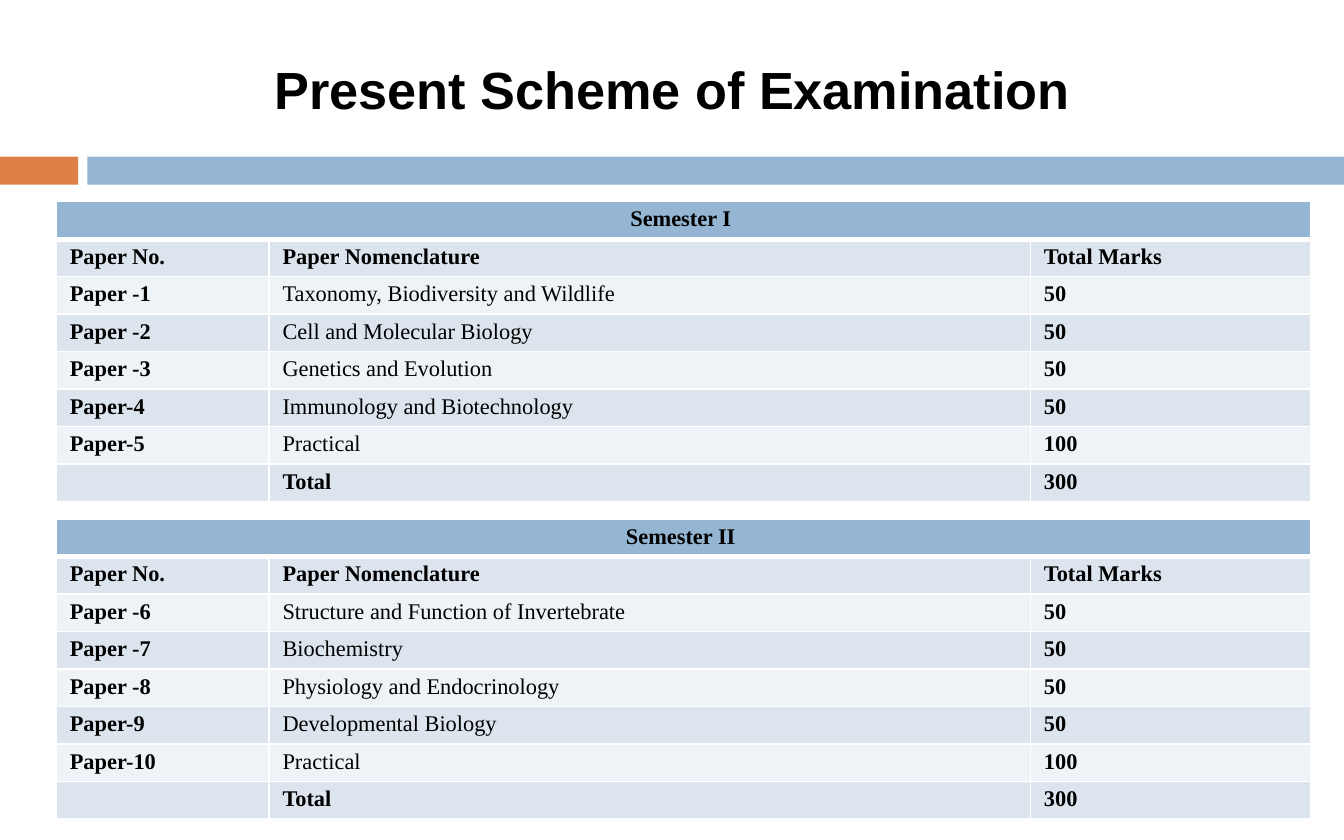
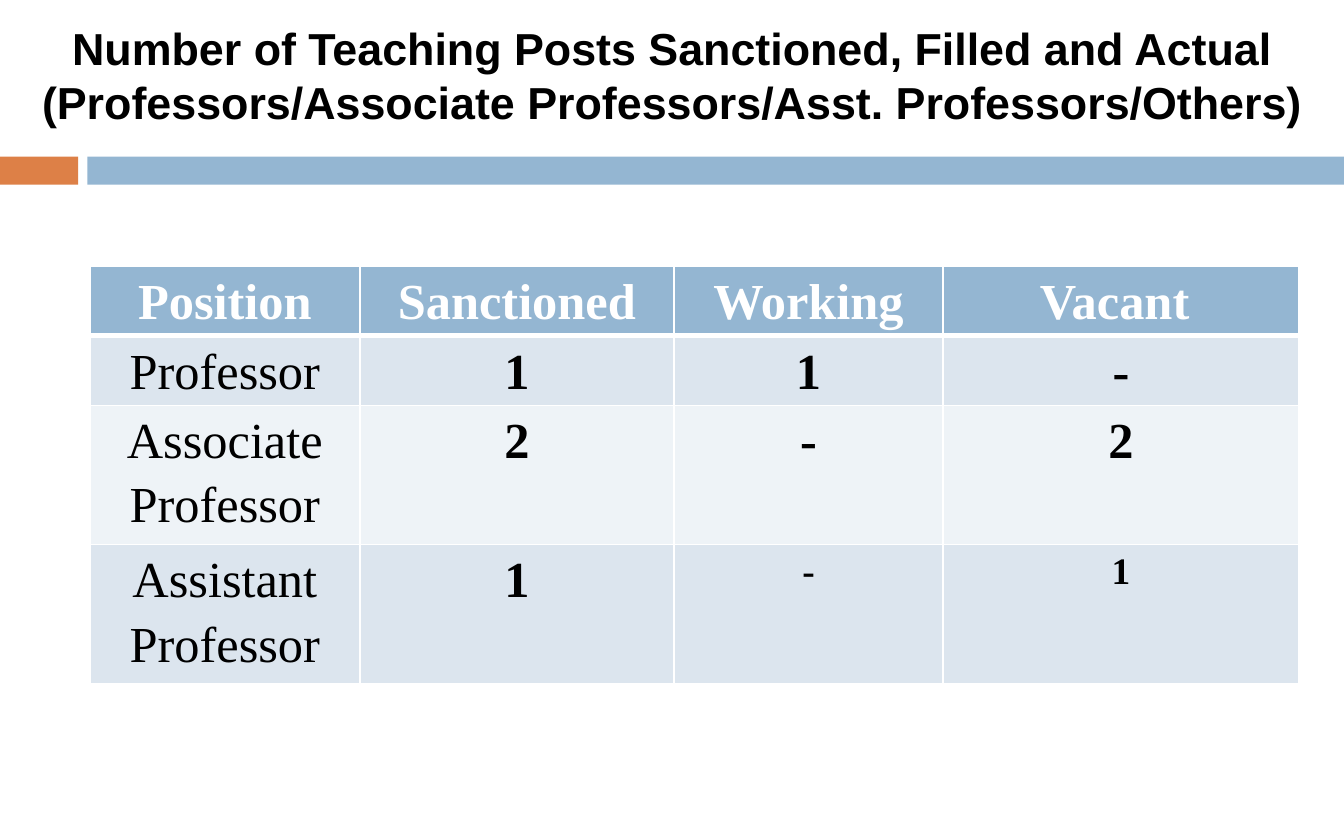
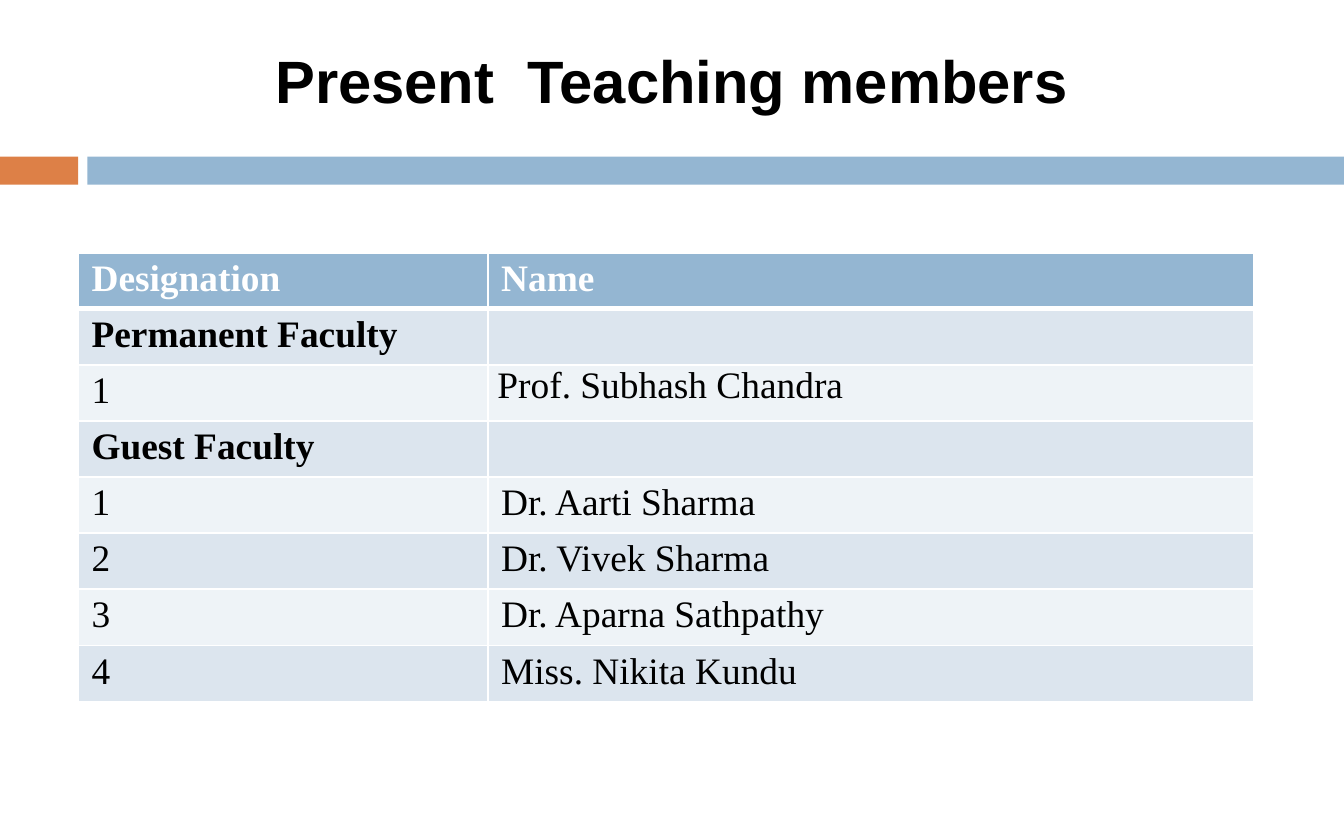
import pptx
import pptx.dml.color
import pptx.enum.shapes
import pptx.enum.text
import pptx.oxml.ns
import pptx.util
from lxml import etree

Cm = pptx.util.Cm
RGBColor = pptx.dml.color.RGBColor
ALIGN = pptx.enum.text.PP_ALIGN
qn = pptx.oxml.ns.qn

BLACK = RGBColor(0x00, 0x00, 0x00)
WHITE = RGBColor(0xFF, 0xFF, 0xFF)
ORANGE = RGBColor(0xDD, 0x80, 0x47)
BLUE = RGBColor(0x94, 0xB6, 0xD2)
ROW_DARK = RGBColor(0xDC, 0xE5, 0xEE)
ROW_LIGHT = RGBColor(0xEE, 0xF3, 0xF7)

TITLE_FONT = "Arial"
TABLE_FONT = "Times New Roman"
PAGE_WIDTH, PAGE_HEIGHT = 25.4, 15.88
WIDE_INSETS = (0.25, 0.1)
TIGHT_INSETS = (0.18, 0)

PAPER_HEADINGS = ("Paper No.", "Paper Nomenclature", "Total Marks")
SEMESTERS = (
    ("Semester I ", (
        ("Paper -1", "Taxonomy, Biodiversity and Wildlife", "50"),
        ("Paper -2", "Cell and Molecular Biology", "50"),
        ("Paper -3", "Genetics and Evolution", "50"),
        ("Paper-4", "Immunology and Biotechnology", "50"),
        ("Paper-5", "Practical", "100"),
    )),
    ("Semester II ", (
        ("Paper -6", "Structure and Function of Invertebrate", "50"),
        ("Paper -7", "Biochemistry", "50"),
        ("Paper -8", "Physiology and Endocrinology", "50"),
        ("Paper-9", "Developmental Biology", "50"),
        ("Paper-10", "Practical", "100"),
    )),
)
POSTS = (
    ("Position", "Sanctioned", "Working", "Vacant "),
    ("Professor", "1", "1", "-"),
    ("Associate Professor", "2", "-", "2"),
    ("Assistant Professor", "1", "-", "1"),
)
MEMBERS = (
    ("Designation", "Name"),
    ("Permanent Faculty", ""),
    ("1", "Prof. Subhash Chandra"),
    ("Guest Faculty", ""),
    ("1", "Dr. Aarti Sharma"),
    ("2", "Dr. Vivek Sharma"),
    ("3", "Dr. Aparna Sathpathy"),
    ("4", "Miss. Nikita Kundu"),
)


def write_text(frame, text, size, font=TABLE_FONT, color=BLACK, bold=False,
               align=ALIGN.LEFT, spacing=None):
    para = frame.paragraphs[0]
    para.alignment = align
    if spacing:
        para.line_spacing = spacing
    if not text:
        etree.SubElement(para._p, qn("a:endParaRPr"), sz=str(size * 100))
        return
    span = para.add_run()
    span.text = text
    span.font.name = font
    span.font.size = pptx.util.Pt(size)
    span.font.bold = bold
    span.font.color.rgb = color


def add_band(page, left, width, color):
    band = page.shapes.add_shape(pptx.enum.shapes.MSO_SHAPE.RECTANGLE,
                                 Cm(left), Cm(2.96), Cm(width), Cm(0.53))
    band.shadow.inherit = False
    band.fill.solid()
    band.fill.fore_color.rgb = color
    band.line.fill.background()


def add_page(deck, title, size, top, height):
    page = deck.slides.add_slide(deck.slide_layouts[6])
    add_band(page, 0, 1.48, ORANGE)
    add_band(page, 1.65, PAGE_WIDTH - 1.65, BLUE)
    box = page.shapes.add_textbox(0, Cm(top), Cm(PAGE_WIDTH), Cm(height))
    frame = box.text_frame
    frame.word_wrap = True
    frame.vertical_anchor = pptx.enum.text.MSO_ANCHOR.MIDDLE
    write_text(frame, title, size, font=TITLE_FONT, bold=True, align=ALIGN.CENTER)
    return page


def draw_borders(cell, row):
    weights = {"L": 1, "R": 1, "T": 3 if row == 1 else 1, "B": 3 if row == 0 else 1}
    for side, weight in weights.items():
        line = etree.SubElement(cell._tc.get_or_add_tcPr(), qn("a:ln" + side),
                                w=str(pptx.util.Pt(weight)))
        fill = etree.SubElement(line, qn("a:solidFill"))
        etree.SubElement(fill, qn("a:srgbClr"), val=str(WHITE))


def add_grid(page, left, top, widths, heights, rows, cell_format):
    grid = page.shapes.add_table(len(rows), len(widths), Cm(left), Cm(top),
                                 Cm(sum(widths)), Cm(sum(heights))).table
    grid.first_row = False
    grid.horz_banding = False
    for column, width in zip(grid.columns, widths):
        column.width = Cm(width)
    for row_index, (texts, height) in enumerate(zip(rows, heights)):
        grid.rows[row_index].height = Cm(height)
        for column_index, text in enumerate(texts):
            cell = grid.cell(row_index, column_index)
            options = cell_format(row_index, column_index)
            side, edge = options.pop("insets", WIDE_INSETS)
            cell.margin_left = cell.margin_right = Cm(side)
            cell.margin_top = cell.margin_bottom = Cm(edge)
            draw_borders(cell, row_index)
            cell.fill.solid()
            cell.fill.fore_color.rgb = (
                BLUE if row_index == 0 else ROW_DARK if row_index % 2 else ROW_LIGHT)
            write_text(cell.text_frame, text, **options)
    return grid


def add_semester(page, left, top, name, papers):
    rows = ((name, "", ""), PAPER_HEADINGS, *papers, ("", "Total", "300"))
    last = len(rows) - 1

    def cell_format(row, column):
        return dict(size=12, bold=column != 1 or row in (1, last),
                    align=ALIGN.CENTER if row == 0 else ALIGN.LEFT)

    grid = add_grid(page, left, top, (4.02, 14.39, 5.29), [0.7] * len(rows),
                    rows, cell_format)
    grid.cell(0, 0).merge(grid.cell(0, 2))


def add_posts(page, left, top):
    def cell_format(row, column):
        return dict(size=20 if row == 3 and column > 1 else 27,
                    color=BLACK if row else WHITE, bold=row == 0 or column > 0,
                    align=ALIGN.CENTER, spacing=1.15, insets=TIGHT_INSETS)

    add_grid(page, left, top, (5.1, 5.94, 5.08, 6.73), (1.3, 1.3, 2.59, 2.59),
             POSTS, cell_format)


def add_members(page, left, top):
    def cell_format(row, column):
        return dict(size=20, color=BLACK if row else WHITE, bold=row in (0, 1, 3),
                    insets=TIGHT_INSETS if (row, column) == (2, 1) else WIDE_INSETS)

    add_grid(page, left, top, (7.74, 14.48), [1.06] * len(MEMBERS),
             MEMBERS, cell_format)


def main():
    deck = pptx.Presentation()
    deck.slide_width = Cm(PAGE_WIDTH)
    deck.slide_height = Cm(PAGE_HEIGHT)

    page = add_page(deck, "Present Scheme of Examination", 28, 0.53, 2.29)
    for index, (name, papers) in enumerate(SEMESTERS):
        add_semester(page, 1.07, 3.81 + 6 * index, name, papers)

    page = add_page(deck, "Number of Teaching Posts Sanctioned, Filled and Actual "
                    "(Professors/Associate Professors/Asst. Professors/Others)",
                    24, 0, 2.82)
    add_posts(page, 1.7, 5.03)

    page = add_page(deck, "Present  Teaching members", 32, 0, 3)
    add_members(page, 1.48, 4.78)

    deck.save("out.pptx")


if __name__ == "__main__":
    main()
